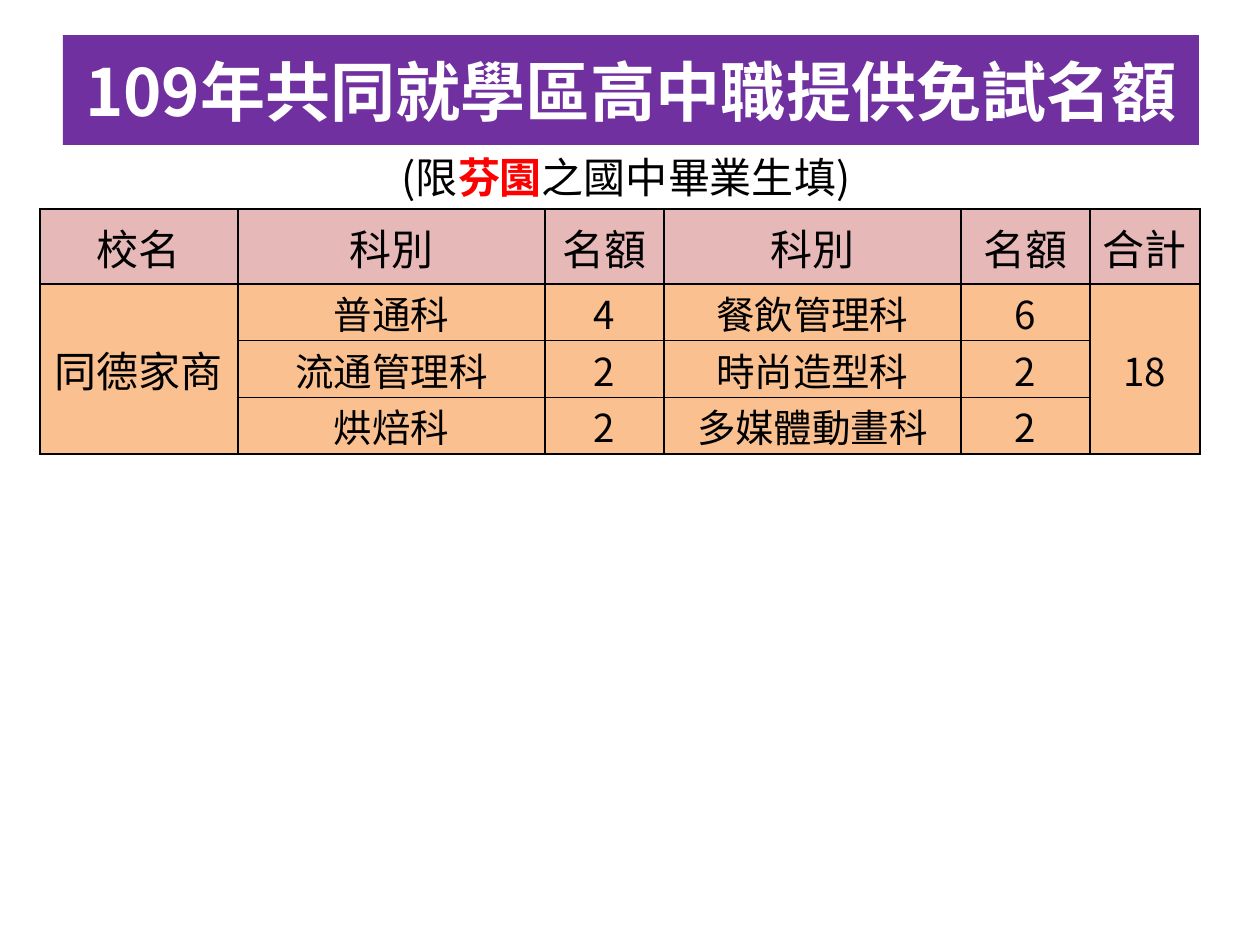
"""Build the slide of exam-free admission places offered by one school."""
from lxml import etree
from pptx import Presentation
from pptx import util as u
from pptx.dml.color import RGBColor
from pptx.enum import shapes, text
from pptx.oxml import ns

SCALE = 914400 / 126
FONT = "Noto Sans CJK SC"
WHITE = RGBColor(0xFF, 0xFF, 0xFF)
BLACK = RGBColor(0, 0, 0)
RED = RGBColor(0xFF, 0, 0)
PURPLE = RGBColor(0x70, 0x30, 0xA0)
PINK = RGBColor(0xE6, 0xB9, 0xB8)
ORANGE = RGBColor(0xFA, 0xC0, 0x90)

COLUMN_WIDTHS = [198, 307, 119, 297, 129, 110]
ROW_HEIGHTS = [75, 56, 56, 56]
ROWS = [
    ["校名", "科別", "名額", "科別", "名額", "合計"],
    ["同德家商", "普通科", "4", "餐飲管理科", "6", "18"],
    ["", "流通管理科", "2", "時尚造型科", "2", ""],
    ["", "烘焙科", "2", "多媒體動畫科", "2", ""],
]
MERGED_COLUMNS = [0, 5]


def px(length):
    return u.Emu(round(length * SCALE))


def box(*lengths):
    return [px(length) for length in lengths]


def style(paragraph, size, color, bold=False):
    paragraph.alignment = text.PP_ALIGN.CENTER
    font = paragraph.font
    font.size = u.Pt(size)
    font.bold = bold
    font.color.rgb = color
    font.name = FONT
    etree.SubElement(font._element, ns.qn("a:ea"), typeface=FONT)


def add_title(slide, words):
    shape = slide.shapes.add_shape(shapes.MSO_SHAPE.RECTANGLE, *box(63, 35, 1136, 110))
    shape.shadow.inherit = False
    shape.fill.solid()
    shape.fill.fore_color.rgb = PURPLE
    shape.line.fill.background()
    frame = shape.text_frame
    frame.margin_left = frame.margin_right = 0
    frame.vertical_anchor = text.MSO_ANCHOR.MIDDLE
    frame.text = words
    style(frame.paragraphs[0], 37.2, WHITE, bold=True)


def add_subtitle(slide, before, highlight, after):
    frame = slide.shapes.add_textbox(*box(11, 145, 1230, 63)).text_frame
    frame.word_wrap = True
    paragraph = frame.paragraphs[0]
    style(paragraph, 24, BLACK)
    for words in (before, highlight, after):
        run = paragraph.add_run()
        run.text = words
        if words == highlight:
            run.font.bold = True
            run.font.color.rgb = RED


def add_borders(cell):
    properties = cell._tc.get_or_add_tcPr()
    for index, side in enumerate(("lnL", "lnR", "lnT", "lnB")):
        line = etree.Element(ns.qn(f"a:{side}"), w=str(u.Pt(1)))
        fill = etree.SubElement(line, ns.qn("a:solidFill"))
        etree.SubElement(fill, ns.qn("a:srgbClr"), val=str(BLACK))
        properties.insert(index, line)


def fill_cell(cell, words, size, color):
    cell.fill.solid()
    cell.fill.fore_color.rgb = color
    cell.margin_left = cell.margin_right = cell.margin_top = px(1)
    cell.margin_bottom = 0
    cell.vertical_anchor = text.MSO_ANCHOR.MIDDLE
    cell.text = words
    style(cell.text_frame.paragraphs[0], size, BLACK)
    add_borders(cell)


def add_places_table(slide):
    bounds = box(40, 209, sum(COLUMN_WIDTHS), sum(ROW_HEIGHTS))
    table = slide.shapes.add_table(len(ROWS), len(COLUMN_WIDTHS), *bounds).table
    for column, width in zip(table.columns, COLUMN_WIDTHS):
        column.width = px(width)
    for row, height in zip(table.rows, ROW_HEIGHTS):
        row.height = px(height)
    for i, row in enumerate(ROWS):
        for j, words in enumerate(row):
            size = 24 if i == 0 or j == 0 else 22
            fill_cell(table.cell(i, j), words, size, PINK if i == 0 else ORANGE)
    for j in MERGED_COLUMNS:
        table.cell(1, j).merge(table.cell(len(ROWS) - 1, j))


def main():
    presentation = Presentation()
    presentation.slide_width = u.Inches(10)
    presentation.slide_height = u.Inches(7.5)
    slide = presentation.slides.add_slide(presentation.slide_layouts[6])
    add_title(slide, "109年共同就學區高中職提供免試名額")
    add_places_table(slide)
    add_subtitle(slide, "(限", "芬園", "之國中畢業生填)")
    presentation.save("out.pptx")


if __name__ == "__main__":
    main()
